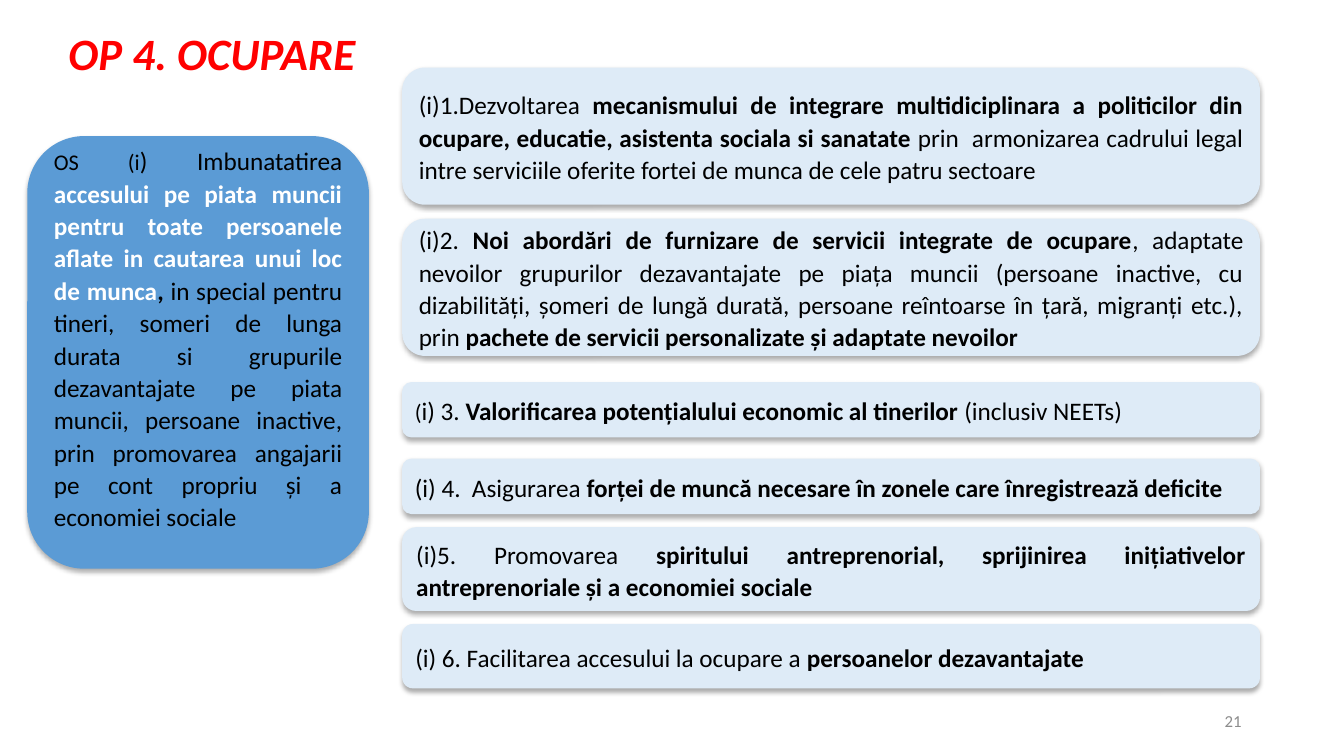
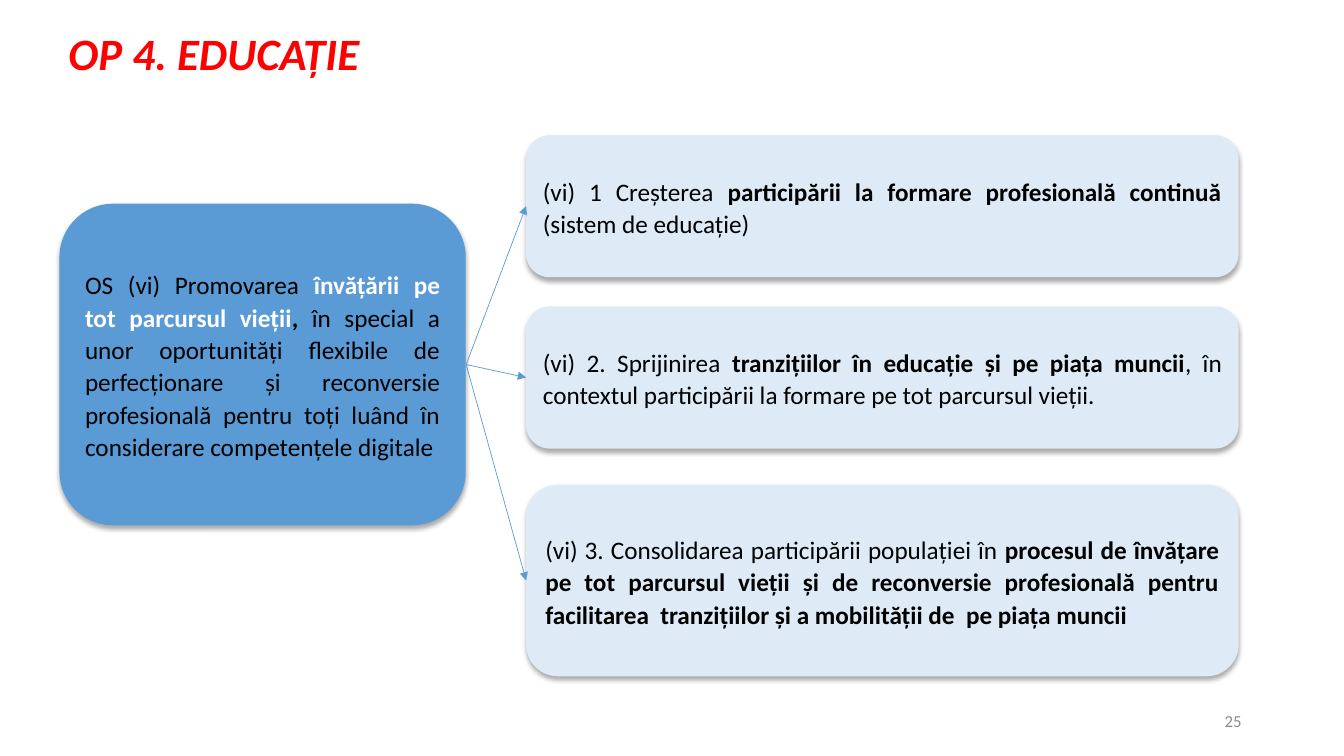
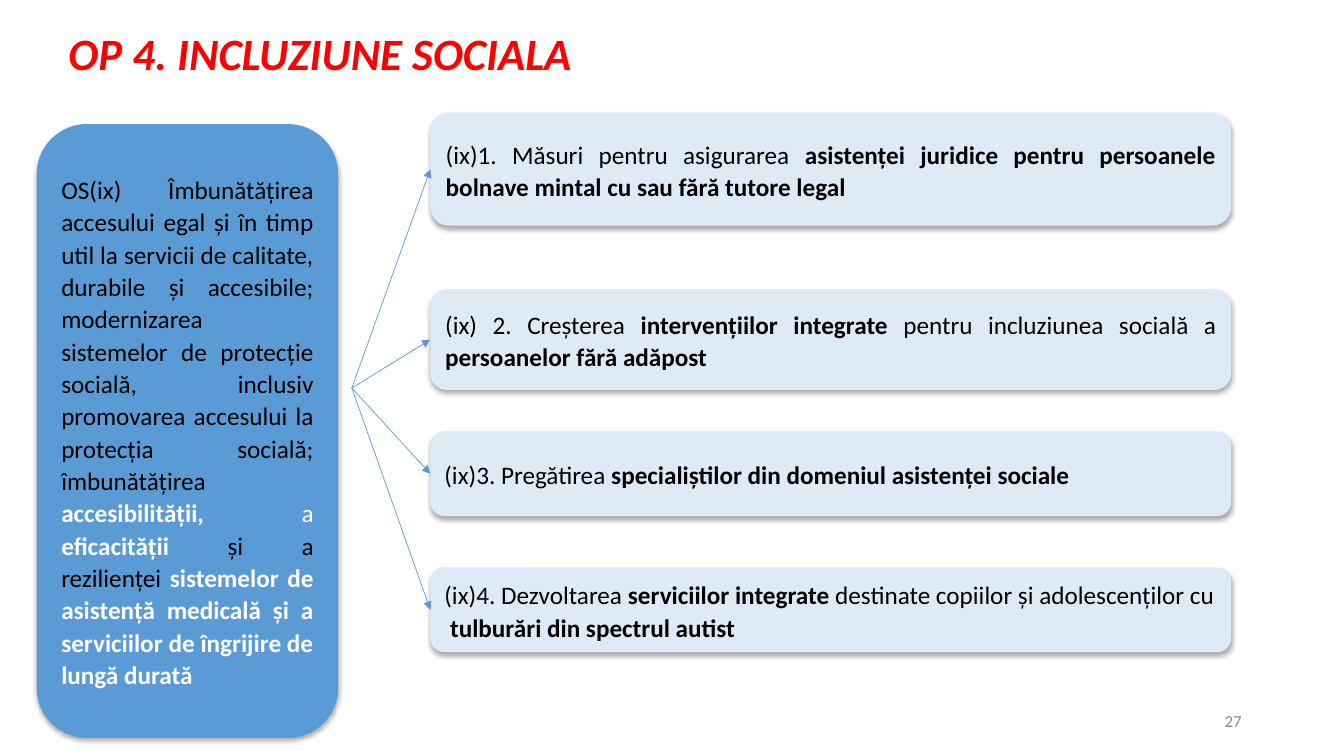
from lxml import etree
from pptx import Presentation
from pptx.dml.color import RGBColor
from pptx.enum.shapes import MSO_CONNECTOR as CONN, MSO_SHAPE as SHAPE
from pptx.enum.text import MSO_ANCHOR as ANCHOR, PP_ALIGN as AL
from pptx.oxml import parse_xml
from pptx.oxml.ns import nsdecls, qn
from pptx.util import Pt

COLORS = {"black": "000000", "white": "FFFFFF", "red": "FF0000", "gray": "8C8C8C",
          "blue": "5B9BD5", "pale": "DEEBF7"}

# Run styles: font attributes plus a colour name
STYLES = {
    "plain": dict(size=Pt(18), color="black"),
    "small": dict(size=Pt(16), color="black"),
    "bold": dict(size=Pt(18), color="black", bold=True),
    "white": dict(size=Pt(18), color="white"),
    "white bold": dict(size=Pt(18), color="white", bold=True),
    "title": dict(size=Pt(32), color="red", bold=True, italic=True),
    "number": dict(size=Pt(12), color="gray"),
}

TITLE_LEFT, TITLE_TOP, TITLE_HEIGHT = 41.8, 15.1, 46
NUMBER_BOX = (678, 500.4, 216, 28.8)
MARGIN_Y = 3.6

# Boxes are (left, top, width, height); cards share left and width, and list
# (top, height, runs) with an optional alignment.
SLIDES = [
    dict(
        title="OP 4. OCUPARE", title_width=230, number="21",
        objective=dict(
            box=(19.5, 97.2, 244, 309), bottom=24.5,
            runs=[
                ("small", "OS (i"), ("plain", ") Imbunatatirea "),
                ("white bold", "accesului pe piata muncii pentru toate persoanele aflate "
                               "in cautarea unui loc de munca"),
                ("bold", ","),
                ("plain", " in special pentru tineri, someri de lunga durata si grupurile "
                          "dezavantajate pe piata muncii, persoane inactive, prin promovarea "
                          "angajarii pe cont propriu și a economiei sociale"),
            ]),
        column=(287.3, 612.7),
        cards=[
            (48.25, 98, [
                ("plain", "(i)1.Dezvoltarea "),
                ("bold", "mecanismului de integrare multidiciplinara a politicilor din "
                         "ocupare, educatie, asistenta sociala si sanatate "),
                ("plain", "prin  armonizarea cadrului legal intre serviciile oferite fortei "
                          "de munca de cele patru sectoare ")]),
            (156.25, 98, [
                ("plain", "(i)2. "),
                ("bold", "Noi abordări de furnizare de servicii integrate de ocupare"),
                ("plain", ", adaptate nevoilor grupurilor dezavantajate pe piața muncii "
                          "(persoane inactive, cu dizabilități, șomeri de lungă durată, "
                          "persoane reîntoarse în țară, migranți etc.), prin "),
                ("bold", "pachete de servicii personalizate și adaptate nevoilor")]),
            (272.9, 39.6, [
                ("small", "("), ("plain", "i) 3. "),
                ("bold", "Valorificarea potențialului economic al tinerilor "),
                ("plain", "(inclusiv NEETs)")], AL.LEFT),
            (327.6, 39.6, [
                ("plain", "(i) 4.  Asigurarea "),
                ("bold", "forței de muncă necesare în zonele care înregistrează deficite")],
             AL.LEFT),
            (376.6, 59.8, [
                ("plain", "(i)5. Promovarea "),
                ("bold", "spiritului antreprenorial, sprijinirea inițiativelor "
                         "antreprenoriale și a economiei sociale")]),
            (445.7, 46, [
                ("plain", "(i) 6. Facilitarea accesului la ocupare a "),
                ("bold", "persoanelor dezavantajate")]),
        ]),
    dict(
        title="OP 4. EDUCAȚIE", title_width=235, number="25",
        objective=dict(
            box=(42.5, 145.5, 290.2, 229.7),
            runs=[
                ("plain", "OS (vi) Promovarea "),
                ("white bold", "învățării pe tot parcursul vieții"), ("bold", ","),
                ("plain", " în special a unor oportunități flexibile de perfecționare și "
                          "reconversie profesională pentru toți luând în considerare "
                          "competențele digitale"),
            ]),
        arrow_start=(333, 260.4),
        column=(375.8, 509),
        cards=[
            (96.5, 101.5, [
                ("plain", "(vi) 1 Creșterea "),
                ("bold", "participării la formare profesională continuă "),
                ("plain", "(sistem de educație)")]),
            (218.9, 101.5, [
                ("plain", "(vi) 2. Sprijinirea "),
                ("bold", "tranzițiilor în educație și pe piața muncii"),
                ("plain", ", în contextul participării la formare pe tot parcursul vieții. ")]),
            (346.3, 136.8, [
                ("plain", "(vi) 3. Consolidarea participării populației în "),
                ("bold", "procesul de învățare pe tot parcursul vieții și de reconversie "
                         "profesională pentru facilitarea  tranzițiilor și a mobilității de  "
                         "pe piața muncii")]),
        ]),
    dict(
        title="OP 4. INCLUZIUNE SOCIALA", title_width=400, number="27",
        objective=dict(
            box=(26.2, 88.6, 215.4, 438.5),
            runs=[
                ("plain", "OS(ix) Îmbunătățirea accesului egal și în timp util la servicii de "
                          "calitate, durabile și accesibile; modernizarea sistemelor de "
                          "protecție socială, inclusiv promovarea accesului la protecția "
                          "socială; îmbunătățirea "),
                ("white bold", "accesibilității,"), ("white", " a "),
                ("white bold", "eficacității "), ("plain", "și a rezilienței "),
                ("white bold", "sistemelor de asistență medicală și a serviciilor de îngrijire "
                               "de lungă durată"),
            ]),
        arrow_start=(251.3, 277.2),
        column=(307.4, 572),
        cards=[
            (80.6, 80.6, [
                ("plain", "(ix)1. Măsuri pentru asigurarea "),
                ("bold", "asistenței juridice pentru persoanele bolnave mintal cu sau fără "
                         "tutore legal")]),
            (206.6, 72, [
                ("plain", "(ix) 2. Creșterea "), ("bold", "intervențiilor integrate "),
                ("plain", "pentru incluziunea socială a "),
                ("bold", "persoanelor fără adăpost")]),
            (308.2, 60.5, [
                ("plain", "(ix)3. Pregătirea "),
                ("bold", "specialiștilor din domeniul asistenței sociale")], AL.LEFT),
            (405.4, 60.5, [
                ("plain", "(ix)4. Dezvoltarea "), ("bold", "serviciilor integrate "),
                ("plain", "destinate copiilor și adolescenților cu  "),
                ("bold", "tulburări din spectrul autist")], AL.LEFT),
        ]),
]

SHADOW = (f'<a:effectLst {nsdecls("a")}>'
          f'<a:outerShdw blurRad="{Pt(3.5)}" dist="{Pt(2.2)}" dir="5400000" rotWithShape="0">'
          '<a:srgbClr val="000000"><a:alpha val="32000"/></a:srgbClr>'
          '</a:outerShdw></a:effectLst>')


def rgb(name):
    return RGBColor.from_string(COLORS[name])


def add_runs(p, runs):
    for style, text in runs:
        r = p.add_run()
        r.text = text
        r.font.name = "Calibri"
        for key, value in STYLES[style].items():
            if key == "color":
                r.font.color.rgb = rgb(value)
            else:
                setattr(r.font, key, value)


def add_label(s, box, style, text, align=AL.LEFT, anchor=ANCHOR.TOP):
    tf = s.shapes.add_textbox(*map(Pt, box)).text_frame
    tf.word_wrap = True
    tf.vertical_anchor = anchor
    tf.paragraphs[0].alignment = align
    add_runs(tf.paragraphs[0], [(style, text)])


def add_panel(s, box, fill, runs, align=AL.JUSTIFY, bottom=MARGIN_Y):
    sp = s.shapes.add_shape(SHAPE.FLOWCHART_ALTERNATE_PROCESS, *map(Pt, box))
    sp.fill.solid()
    sp.fill.fore_color.rgb = rgb(fill)
    sp.line.fill.background()
    sp._element.spPr.append(parse_xml(SHADOW))
    tf = sp.text_frame
    tf.word_wrap = True
    tf.vertical_anchor = ANCHOR.MIDDLE
    tf.margin_bottom = Pt(bottom)
    p = tf.paragraphs[0]
    for key, value in dict(alignment=align, line_spacing=1.07, space_after=Pt(8)).items():
        setattr(p, key, value)
    add_runs(p, runs)


def add_arrow(s, start, end):
    cn = s.shapes.add_connector(CONN.STRAIGHT, *map(Pt, start + end))
    cn.line.color.rgb = rgb("blue")
    cn.line.width = Pt(0.5)
    etree.SubElement(cn.line._get_or_add_ln(), qn("a:tailEnd"), type="triangle")
    etree.SubElement(cn._element.spPr, qn("a:effectLst"))


def build_slide(prs, data):
    s = prs.slides.add_slide(prs.slide_layouts[6])
    goal = data["objective"]
    add_panel(s, goal["box"], "blue", goal["runs"], bottom=goal.get("bottom", MARGIN_Y))
    left, width = data["column"]
    for top, height, runs, *align in data["cards"]:
        add_panel(s, (left, top, width, height), "pale", runs, *align)
        if "arrow_start" in data:
            add_arrow(s, data["arrow_start"], (left, top + height / 2))
    add_label(s, NUMBER_BOX, "number", data["number"], AL.RIGHT, ANCHOR.MIDDLE)
    title_box = (TITLE_LEFT, TITLE_TOP, data["title_width"], TITLE_HEIGHT)
    add_label(s, title_box, "title", data["title"])


def main():
    prs = Presentation()
    prs.slide_width, prs.slide_height = Pt(960), Pt(540)
    for data in SLIDES:
        build_slide(prs, data)
    prs.save("out.pptx")


if __name__ == "__main__":
    main()
